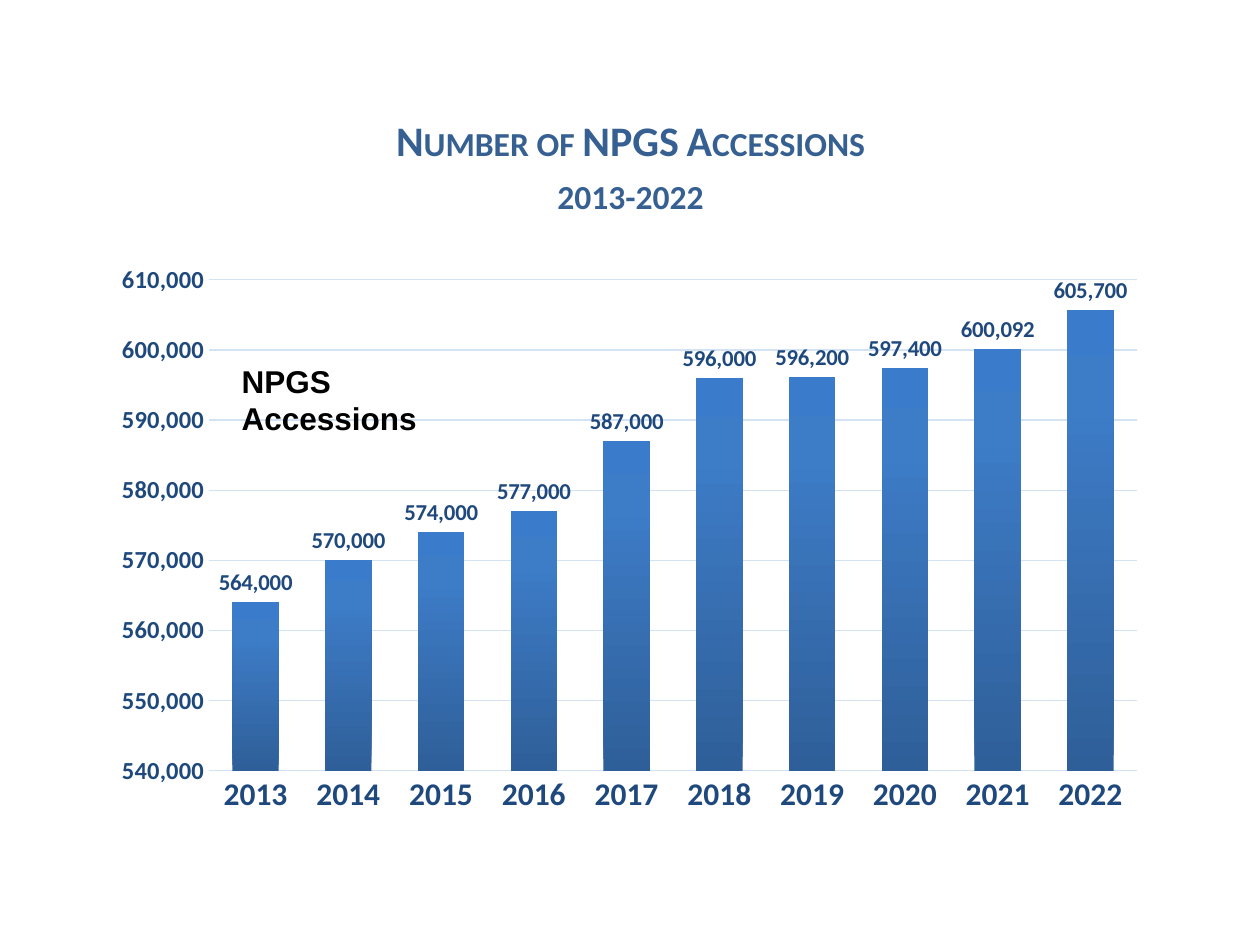
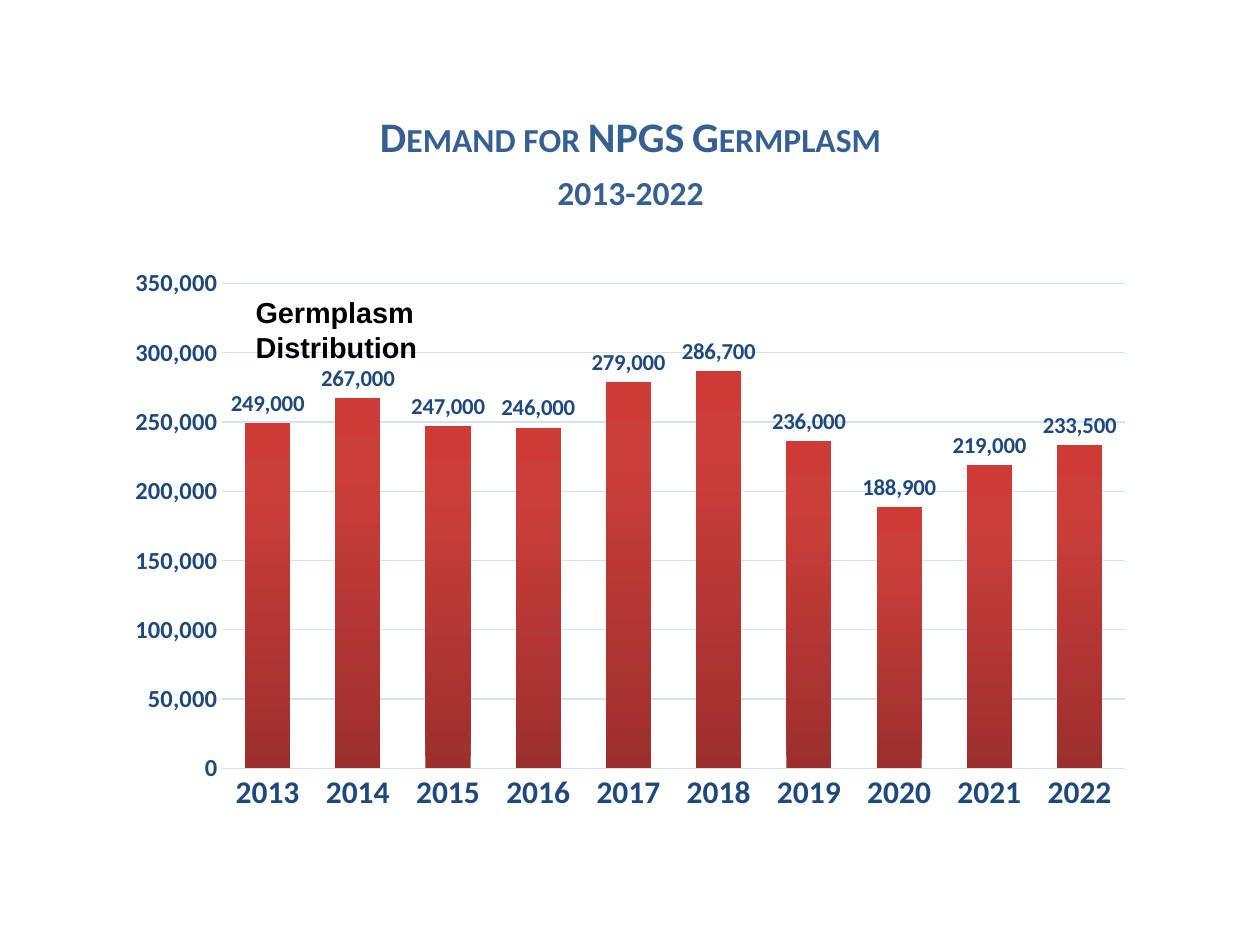
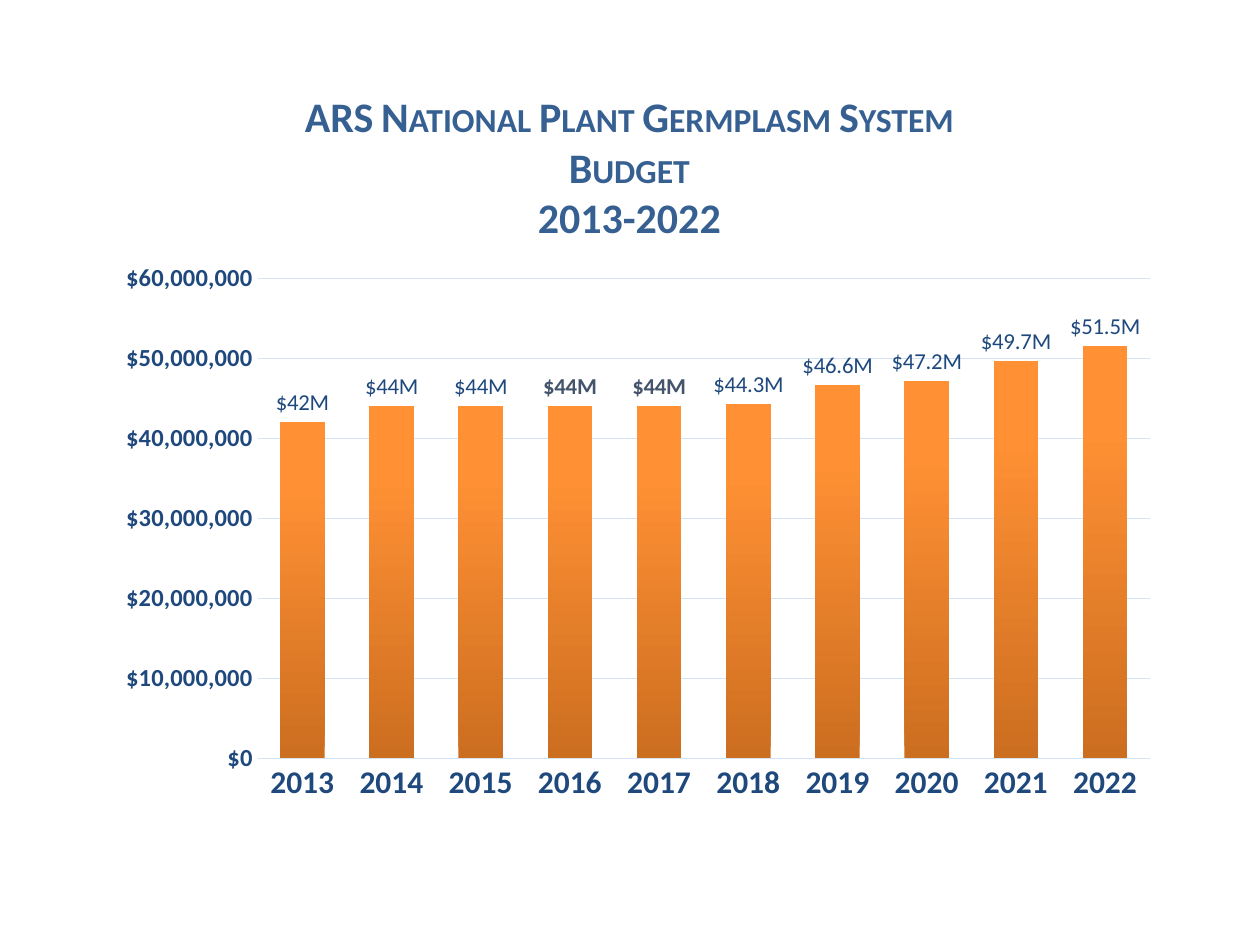
from copy import deepcopy

from pptx import Presentation
from pptx.chart.data import CategoryChartData
from pptx.dml.color import RGBColor
from pptx.enum.chart import XL_CHART_TYPE, XL_LABEL_POSITION, XL_TICK_MARK
from pptx.enum.text import MSO_ANCHOR, MSO_AUTO_SIZE, PP_ALIGN
from pptx.oxml import parse_xml
from pptx.oxml.ns import nsdecls, qn
from pptx.util import Inches, Pt

COLUMNS = XL_CHART_TYPE.COLUMN_CLUSTERED
OUTSIDE_END = XL_LABEL_POSITION.OUTSIDE_END
NO_TICK = XL_TICK_MARK.NONE
TOP, MIDDLE = MSO_ANCHOR.TOP, MSO_ANCHOR.MIDDLE
LEFT, CENTER = PP_ALIGN.LEFT, PP_ALIGN.CENTER
GROW = MSO_AUTO_SIZE.SHAPE_TO_FIT_TEXT

# Shared style
HEADING, BODY = "Calibri", "Arial"
TITLE_BLUE, LABEL_BLUE, GRID_BLUE = "376092", "1F497D", "D4E3F4"
BLACK, SLATE = "000000", "44546A"
BLUE_BARS = ("2F5F99", "3D7CC7", "3A7CCB")
RED_BARS = ("9C2F2D", "CB3E3A", "CE3B37")
ORANGE_BARS = ("CC6E20", "FF9034", "FF9136")
STOP_POSITIONS = (0, 0.8, 1)

YEARS = [str(year) for year in range(2013, 2023)]
PERIOD = "2013-2022"


def color(value):
    return RGBColor.from_string(value)


def style_font(font, size, shade, bold=True, name=HEADING):
    font.name, font.size, font.bold = name, Pt(size), bold
    font.color.rgb = color(shade)


def add_text(page, place, lines, size=18, shade=BLACK, name=BODY, align=LEFT,
             anchor=TOP, margins=(0.1, 0.05), spacing=None, after=None,
             small_caps=0, grow=False):
    """Add a text box; the first small_caps lines are set in small capitals."""
    box = page.shapes.add_textbox(*map(Inches, place))
    frame = box.text_frame
    frame.word_wrap = True
    frame.vertical_anchor = anchor
    frame.margin_left = frame.margin_right = Inches(margins[0])
    frame.margin_top = frame.margin_bottom = Inches(margins[1])
    if grow:
        frame.auto_size = GROW
    for index, line in enumerate(lines):
        para = frame.add_paragraph() if index else frame.paragraphs[0]
        para.alignment = align
        para.line_spacing = spacing
        if after:
            para.space_after = Pt(after)
        span = para.add_run()
        span.text = line
        style_font(span.font, size, shade, name=name)
        if index < small_caps:
            span.font._element.set("cap", "small")


def add_title(page, place, title, **options):
    add_text(page, place, [title, PERIOD], size=24, shade=TITLE_BLUE,
             name=HEADING, align=CENTER, anchor=MIDDLE, **options)


def fill_gradient(series, shades):
    """Shade the columns from the bottom up."""
    fill = series.format.fill
    fill.gradient()
    fill.gradient_angle = 90
    stop_list = series._element.find(".//" + qn("a:gsLst"))
    stop_list.append(deepcopy(stop_list[-1]))
    for stop, position, shade in zip(fill.gradient_stops, STOP_POSITIONS, shades):
        stop.position = position
        stop.color.rgb = color(shade)


def style_line(line):
    line.color.rgb = color(GRID_BLUE)
    line.width = Pt(0.75)


def style_axes(chart, scale, number_format):
    years, values = chart.category_axis, chart.value_axis
    for axis, size in ((years, 18), (values, 14)):
        axis.major_tick_mark = axis.minor_tick_mark = NO_TICK
        style_font(axis.tick_labels.font, size, LABEL_BLUE)
    style_line(years.format.line)
    values.format.line.fill.background()
    values.has_major_gridlines = True
    style_line(values.major_gridlines.format.line)
    values.minimum_scale, values.maximum_scale, values.major_unit = scale
    values.tick_labels.number_format = number_format
    values.tick_labels.number_format_is_linked = False


def place_plot(chart, percents):
    """Fix the inner plot area, given in percent of the chart."""
    parts = "".join(f'<c:{tag} val="{percent / 100}"/>'
                    for tag, percent in zip("xywh", percents))
    layout = parse_xml(
        f'<c:layout {nsdecls("c")}><c:manualLayout><c:layoutTarget val="inner"/>'
        f'<c:xMode val="edge"/><c:yMode val="edge"/>{parts}'
        '</c:manualLayout></c:layout>')
    area = chart._chartSpace.find(".//" + qn("c:plotArea"))
    for old in area.findall(qn("c:layout")):
        area.remove(old)
    area.insert(0, layout)


def label_in_millions(series, values, bold_years):
    for point, (year, value) in enumerate(zip(YEARS, values)):
        label = series.points[point].data_label
        span = label.text_frame.paragraphs[0].add_run()
        span.text = f"${value / 1_000_000:g}M"
        bold = year in bold_years
        style_font(span.font, 13, SLATE if bold else LABEL_BLUE, bold)
        label.position = OUTSIDE_END


def add_column_chart(page, place, values, shades, scale, number_format="#,##0"):
    data = CategoryChartData()
    data.categories = YEARS
    data.add_series("Series 1", values)
    chart = page.shapes.add_chart(COLUMNS, *map(Inches, place), data).chart
    chart.has_legend = chart.has_title = False
    style_font(chart.font, 10, BLACK, bold=False)
    style_axes(chart, scale, number_format)

    plot = chart.plots[0]
    plot.gap_width, plot.overlap = 100, -24
    plot.vary_by_categories = False
    series = plot.series[0]
    series.invert_if_negative = False
    fill_gradient(series, shades)
    labels = series.data_labels
    labels.show_value = True
    labels.position = OUTSIDE_END
    labels.number_format = number_format
    labels.number_format_is_linked = False
    style_font(labels.font, 13, LABEL_BLUE)
    return chart


def main():
    deck = Presentation()
    deck.slide_width, deck.slide_height = Inches(10), Inches(7.5)
    accessions, demand, budget = (
        deck.slides.add_slide(deck.slide_layouts[6]) for _ in range(3))
    tight = {"margins": (0.07, 0.04), "spacing": 0.9, "after": 4.5, "small_caps": 2}

    # Accessions
    add_title(accessions, (1.77, 0.8, 6.47, 1.09), "Number of NPGS Accessions", **tight)
    add_column_chart(
        accessions, (0.8, 2.01, 8.39, 4.54),
        [564000, 570000, 574000, 577000, 587000,
         596000, 596200, 597400, 600092, 605700],
        BLUE_BARS, (540000, 610000, 10000))
    add_text(accessions, (1.82, 2.82, 2.26, 0.71), ["NPGS Accessions"], grow=True)

    # Demand
    add_title(demand, (1.77, 0.77, 6.47, 1.09), "Demand for NPGS Germplasm", **tight)
    add_column_chart(
        demand, (0.91, 2.04, 8.18, 4.49),
        [249000, 267000, 247000, 246000, 279000,
         286700, 236000, 188900, 219000, 233500],
        RED_BARS, (0, 350000, 50000))
    add_text(demand, (1.93, 2.29, 2.71, 0.66), ["Germplasm Distribution"],
             size=16.5, grow=True)

    # Budget
    add_title(budget, (1.92, 0.75, 6.15, 1.14),
              "ARS National Plant Germplasm System Budget", small_caps=1)
    dollars = [42000000, 44000000, 44000000, 44000000, 44000000,
               44300000, 46600000, 47200000, 49700000, 51500000]
    chart = add_column_chart(budget, (0.72, 2.01, 8.55, 4.54), dollars, ORANGE_BARS,
                             (0, 60000000, 10000000), '"$"#,##0')
    place_plot(chart, (15.5, 4.4, 82.8, 83.9))
    label_in_millions(chart.plots[0].series[0], dollars, ("2016", "2017"))

    deck.save("out.pptx")


if __name__ == "__main__":
    main()
